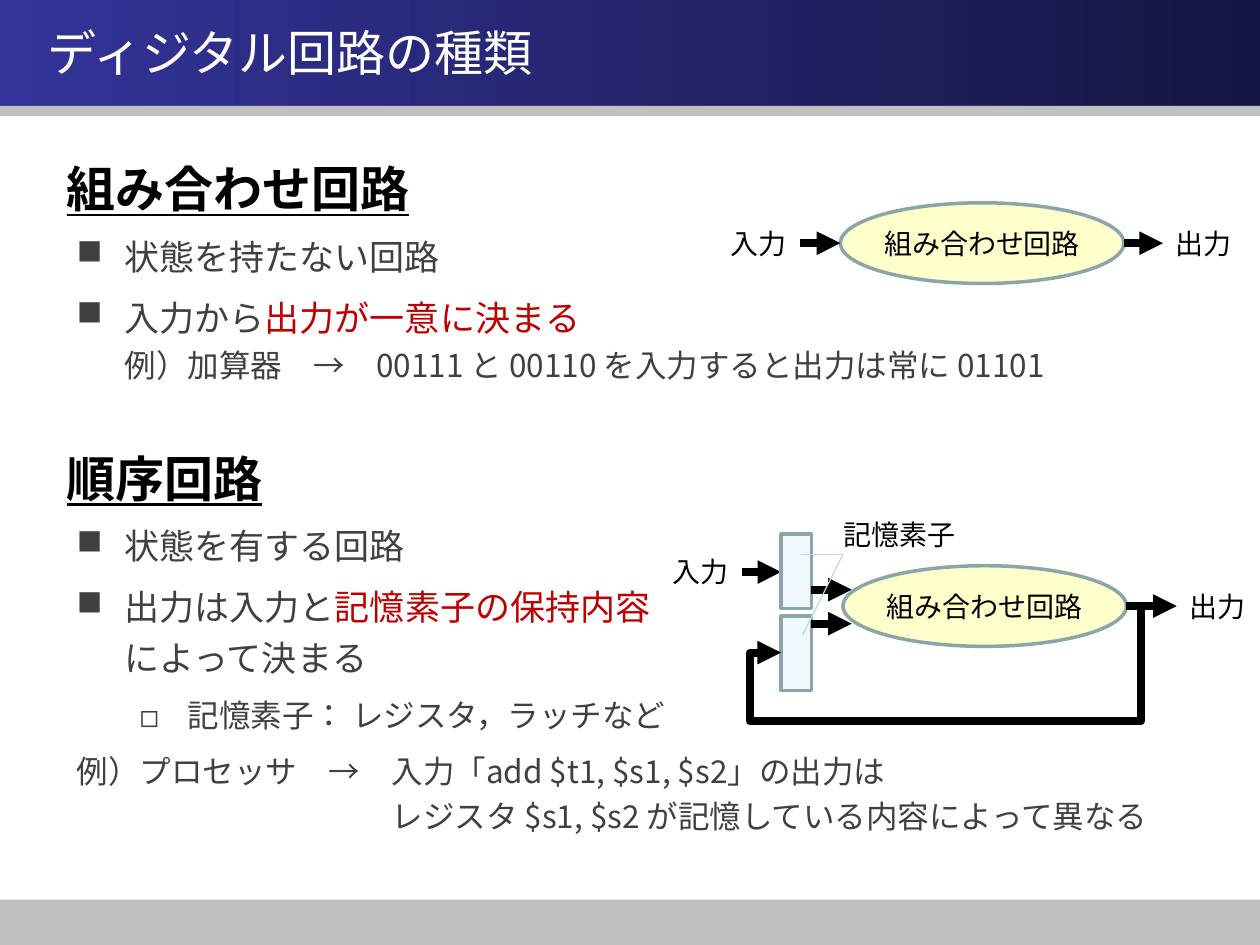
from lxml import etree
from pptx import Presentation, util as u
from pptx.dml.color import RGBColor
from pptx.enum import lang, shapes, text
from pptx.oxml.ns import qn

COLORS = {
    "navy": "333399", "dark navy": "161642", "silver": "C0C0C0", "white": "FFFFFF",
    "black": "000000", "gray": "404040", "red": "C00000", "cream": "FFFFCC",
    "ice": "EFF8FF", "outline": "8AA6A8", "leader": "B6DCDF",
}
TITLE_FONT, LABEL_FONT, BODY_FONT = "League Spartan", "Vollkorn", "Noto Sans CJK JP"
BULLET_FONTS = {"■": "OpenSymbol", "◻": BODY_FONT}
BREAK = "\n"


def rgb(name):
    return RGBColor.from_string(COLORS[name])


def child(parent, tag, **attributes):
    return etree.SubElement(parent, qn(tag), **attributes)


class SlideBuilder:
    def __init__(self, slide):
        self.slide = slide

    def shape(self, kind, left, top, width, height, fill, line=None):
        shape = self.slide.shapes.add_shape(
            kind, *map(u.Inches, (left, top, width, height)))
        shape.shadow.inherit = False
        if isinstance(fill, tuple):
            shape.fill.gradient()
            shape.fill.gradient_angle = 0
            for stop, name in zip(shape.fill.gradient_stops, fill):
                stop.color.rgb = rgb(name)
        else:
            shape.fill.solid()
            shape.fill.fore_color.rgb = rgb(fill)
        if line:
            shape.line.color.rgb = rgb(line)
            shape.line.width = u.Pt(2)
        else:
            shape.line.fill.background()
        return shape

    def run(self, paragraph, words, size, font, color, heading=False):
        run = paragraph.add_run()
        run.text = words
        run.font.size = u.Pt(size)
        run.font.name = font
        run.font.color.rgb = rgb(color)
        run.font.language_id = lang.MSO_LANGUAGE_ID.JAPANESE
        if heading:
            run.font.bold = run.font.underline = True
        child(run.font._element, "a:ea", typeface=BODY_FONT)

    def text_box(self, left, top, width, height, wrap=True):
        box = self.slide.shapes.add_textbox(*map(u.Inches, (left, top, width, height)))
        box.text_frame.word_wrap = wrap
        return box.text_frame

    def label(self, words, left, top, width=0.65):
        frame = self.text_box(left, top, width, 0.37, wrap=False)
        self.run(frame.paragraphs[0], words, 16, LABEL_FONT, "black")

    def heading(self, words, top):
        frame = self.text_box(0.43, top, 8.27, 0.57)
        self.run(frame.paragraphs[0], words, 28, BODY_FONT, "black", heading=True)

    def logic_ellipse(self, left, top):
        shape = self.shape(shapes.MSO_SHAPE.OVAL, left, top, 2.25, 0.64, "cream", "outline")
        frame = shape.text_frame
        frame.margin_left = frame.margin_right = frame.margin_top = frame.margin_bottom = 0
        frame.vertical_anchor = text.MSO_ANCHOR.MIDDLE
        frame.paragraphs[0].alignment = text.PP_ALIGN.CENTER
        self.run(frame.paragraphs[0], "組み合わせ回路", 16, LABEL_FONT, "black")

    def line(self, start, end, color="black", width=4.5, arrow=True, bends=None):
        connector = self.slide.shapes.add_connector(
            shapes.MSO_CONNECTOR.STRAIGHT, *map(u.Inches, (*start, *end)))
        connector.line.color.rgb = rgb(color)
        connector.line.width = u.Pt(width)
        if arrow:
            line = connector.line._get_or_add_ln()
            child(line, "a:round")
            child(line, "a:tailEnd", type="triangle")
        properties = connector._element.spPr
        child(properties, "a:effectLst")
        if bends:
            geometry = properties.find(qn("a:prstGeom"))
            geometry.set("prst", "bentConnector5")
            guides = geometry.find(qn("a:avLst"))
            if guides is None:
                guides = child(geometry, "a:avLst")
            for number, bend in enumerate(bends, 1):
                child(guides, "a:gd", name=f"adj{number}", fmla=f"val {round(bend * 100000)}")

    def paragraph(self, frame, runs, size, bullet=None, margin=0.38, hang=0.38, before=0):
        first = not frame.paragraphs[0].runs
        paragraph = frame.paragraphs[0] if first else frame.add_paragraph()
        paragraph.line_spacing = 1.2
        paragraph.space_before = u.Pt(before)
        paragraph.space_after = u.Pt(6)
        properties = paragraph._p.get_or_add_pPr()
        properties.set("marL", str(u.Inches(margin)))
        properties.set("indent", str(-u.Inches(hang)))
        if bullet:
            child(properties, "a:buFont", typeface=BULLET_FONTS[bullet])
            child(properties, "a:buChar", char=bullet)
        for item in runs:
            if item == BREAK:
                paragraph.add_line_break()
            else:
                words, color, *own_size = item
                self.run(paragraph, words, own_size[0] if own_size else size, BODY_FONT, color)


def main():
    presentation = Presentation()
    presentation.slide_width, presentation.slide_height = u.Inches(10), u.Inches(7.5)
    builder = SlideBuilder(presentation.slides.add_slide(presentation.slide_layouts[6]))
    rectangle = shapes.MSO_SHAPE.RECTANGLE

    # Title band and footer
    builder.shape(rectangle, 0, 7.14, 10, 0.36, "silver")
    builder.shape(rectangle, 0, 0, 10, 0.84, ("navy", "dark navy"))
    builder.shape(rectangle, 0, 0.84, 10, 0.08, "silver")
    title = builder.text_box(0.28, 0.14, 6.83, 0.54)
    title.vertical_anchor = text.MSO_ANCHOR.MIDDLE
    builder.run(title.paragraphs[0], "ディジタル回路の種類", 28, TITLE_FONT, "white")

    # Combinational circuit diagram
    builder.logic_ellipse(6.67, 1.61)
    builder.label("入力", 5.7, 1.75)
    builder.label("出力", 9.23, 1.75)
    builder.line((6.35, 1.93), (6.67, 1.93))
    builder.line((8.92, 1.93), (9.23, 1.93))

    # Sequential circuit diagram with feedback
    builder.logic_ellipse(6.69, 4.49)
    builder.label("入力", 5.24, 4.35)
    builder.label("出力", 9.34, 4.63)
    builder.line((5.89, 4.54), (6.2, 4.54))
    builder.line((8.94, 4.81), (9.34, 4.81))
    for top in (4.89, 4.24):
        builder.shape(rectangle, 6.2, top, 0.24, 0.59, "ice", "outline")
    builder.line((8.94, 4.81), (6.2, 5.18), bends=(-0.042, 2.474, 1.091))
    for level in (4.95, 4.68):
        builder.line((6.44, level), (6.76, level))
    builder.label("記憶素子", 6.6, 4.06, 1.1)
    for start in ((6.37, 5.04), (6.36, 4.4)):
        builder.line(start, (6.69, 4.4), "leader", 0.75, arrow=False)

    # Headings and explanations
    builder.heading("組み合わせ回路", 1.21)
    builder.heading("順序回路", 3.51)
    body = builder.text_box(0.51, 1.75, 9.48, 5.35)
    builder.paragraph(body, [("状態を持たない回路", "gray")], 20, "■")
    builder.paragraph(body, [
        ("入力から", "gray"), ("出力が一意に決まる", "red"), BREAK,
        ("例）加算器　→　00111 と 00110 を入力すると出力は常に 01101", "gray", 18)], 20, "■")
    builder.paragraph(body, [("状態を有する回路", "gray")], 20, "■", before=70)
    builder.paragraph(body, [
        ("出力は入力と", "gray"), ("記憶素子の保持内容", "red"), BREAK,
        ("によって決まる", "gray")], 20, "■")
    builder.paragraph(body, [("記憶素子： レジスタ，ラッチなど", "gray")], 18, "◻", margin=0.88)
    builder.paragraph(body, [
        ("例）プロセッサ　→　入力「add $t1, $s1, $s2」の出力は", "gray"), BREAK,
        ("レジスタ $s1, $s2 が記憶している内容によって異なる", "gray")], 18, margin=2.5, hang=2.5)

    presentation.save("out.pptx")


if __name__ == "__main__":
    main()
